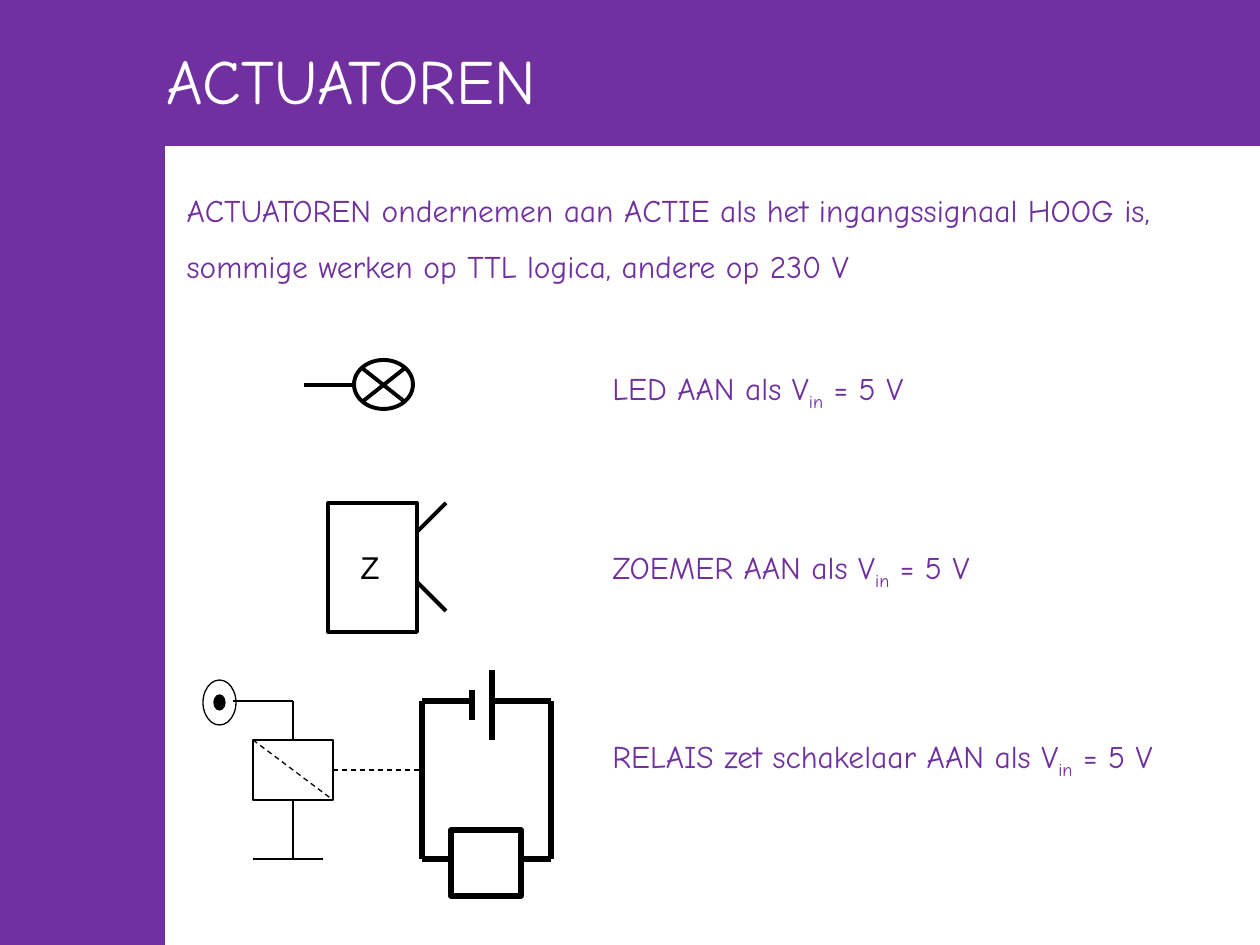
import pptx
import pptx.dml.color
import pptx.enum.dml
import pptx.enum.shapes
import pptx.enum.text
import pptx.util
import pptx.oxml.ns
from lxml import etree

SCALE = 914400 / 126
PURPLE, WHITE, BLACK = "7030A0", "FFFFFF", "000000"
FONT = "Comic Neue"
RECT = pptx.enum.shapes.MSO_SHAPE.RECTANGLE
OVAL = pptx.enum.shapes.MSO_SHAPE.OVAL
TOP, RIGHT, BOTTOM = 0, 3, 2


def px(*nums):
    return [round(n * SCALE) for n in nums]


def tint(code):
    return pptx.dml.color.RGBColor.from_string(code)


def stroke(line, color, width):
    line.color.rgb = tint(color)
    line.width = pptx.util.Pt(width)


def add_form(shapes, kind, box, width, fill=None, color=BLACK):
    form = shapes.add_shape(kind, *px(*box))
    form.shadow.inherit = False
    if fill:
        form.fill.solid()
        form.fill.fore_color.rgb = tint(fill)
    else:
        form.fill.background()
    stroke(form.line, color, width)
    return form


def add_wire(shapes, ends, width, dash=False):
    wire = shapes.add_connector(pptx.enum.shapes.MSO_CONNECTOR.STRAIGHT, *px(*ends))
    stroke(wire.line, BLACK, width)
    if dash:
        wire.line.dash_style = pptx.enum.dml.MSO_LINE.DASH
    etree.SubElement(wire._element.spPr, pptx.oxml.ns.qn("a:effectLst"))
    return wire


def style(para, size=18, color=PURPLE, name=FONT):
    para.alignment = pptx.enum.text.PP_ALIGN.LEFT
    para.space_before = pptx.util.Pt(0)
    para.font.size = pptx.util.Pt(size)
    para.font.name = name
    para.font.color.rgb = tint(color)


def place(holder, box):
    holder.left, holder.top, holder.width, holder.height = px(*box)
    frame = holder.text_frame
    frame.word_wrap = True
    frame.auto_size = pptx.enum.text.MSO_AUTO_SIZE.NONE
    frame.vertical_anchor = pptx.enum.text.MSO_ANCHOR.TOP
    return frame


def add_frame(slide):
    """Purple bars behind the text, and the title on them."""
    tree = slide.shapes._spTree
    for box in ((0, 0, 1260, 145), (0, 0, 164, 945)):
        bar = add_form(slide.shapes, RECT, box, 0.75, PURPLE, PURPLE)
        tree.insert(2, bar._element)
    frame = place(slide.shapes.title, (154, 35, 853, 88))
    frame.text = "ACTUATOREN"
    style(frame.paragraphs[0], 36, WHITE)


def add_intro(slide, box):
    frame = place(slide.placeholders[1], box)
    frame.text = ("ACTUATOREN ondernemen aan ACTIE als het ingangssignaal HOOG is,\n"
                  "sommige werken op TTL logica, andere op 230 V")
    for para in frame.paragraphs:
        style(para)
        props = para._p.get_or_add_pPr()
        props.set("marL", "0")
        props.set("indent", "0")
        etree.SubElement(props, pptx.oxml.ns.qn("a:buNone"))
        props.insert_element_before(props[-1], "a:defRPr")
    frame.paragraphs[1].space_before = pptx.util.Pt(10)


def add_label(slide, box, lead):
    """Label that ends in V with a lowered "in"."""
    para = place(slide.shapes.add_textbox(0, 0, 0, 0), box).paragraphs[0]
    style(para)
    for text in (lead + " als V", "in", " = 5 V"):
        run = para.add_run()
        run.text = text
        if text == "in":
            run._r.get_or_add_rPr().set("baseline", "-25000")


def add_lamp(slide, x, y):
    parts = slide.shapes.add_group_shape().shapes
    add_form(parts, OVAL, (x + 50, y, 59, 49), 2.25)
    add_wire(parts, (x + 58, y + 8, x + 101, y + 42), 2.25)
    add_wire(parts, (x + 101, y + 8, x + 58, y + 42), 2.25)
    add_wire(parts, (x, y + 25, x + 50, y + 25), 2.25)


def add_buzzer(slide, x, y):
    parts = slide.shapes.add_group_shape().shapes
    add_form(parts, RECT, (x, y, 89, 129), 2.25)
    for start, end in ((29, 0), (79, 108)):
        add_wire(parts, (x + 89, y + start, x + 118, y + end), 2.25)
    frame = place(parts.add_textbox(0, 0, 0, 0), (x + 20, y + 39, 49, 50))
    frame.text = "Z"
    style(frame.paragraphs[0], color=BLACK, name="Arial")


def add_coil(parts, x, y):
    """Push button, relay coil and ground."""
    coil = add_form(parts, RECT, (x + 50, y + 70, 80, 60), 0.75)
    add_form(parts, OVAL, (x, y + 10, 33, 45), 0.75)
    add_form(parts, OVAL, (x + 11, y + 25, 11, 15), 0.75, BLACK)
    add_wire(parts, (x + 30, y + 31, x + 90, y + 31), 0.75)
    add_wire(parts, (x + 90, y + 31, x + 90, y + 70), 0.75).end_connect(coil, TOP)
    add_wire(parts, (x + 90, y + 130, x + 90, y + 189), 0.75).begin_connect(coil, BOTTOM)
    add_wire(parts, (x + 50, y + 189, x + 120, y + 189), 0.75)
    add_wire(parts, (x + 130, y + 100, x + 219, y + 100), 0.75, True).begin_connect(coil, RIGHT)
    add_wire(parts, (x + 50, y + 70, x + 130, y + 130), 0.75, True)


def add_loop(parts, x, y):
    """Switched circuit with a battery and a load."""
    wires = ((0, 31, 50, 31), (70, 31, 129, 31),
             (0, 31, 0, 189), (129, 31, 129, 189),
             (0, 189, 29, 189), (100, 189, 129, 189),
             (50, 20, 50, 50), (70, 0, 70, 70))
    for x1, y1, x2, y2 in wires:
        add_wire(parts, (x + x1, y + y1, x + x2, y + y2), 3)
    add_form(parts, RECT, (x + 29, y + 160, 70, 66), 3)


def add_relay(slide, x, y):
    parts = slide.shapes.add_group_shape().shapes
    add_coil(parts, x, y)
    add_loop(parts, x + 219, y)


def main():
    deck = pptx.Presentation()
    deck.slide_width, deck.slide_height = px(1260, 945)
    slide = deck.slides.add_slide(deck.slide_layouts[1])
    add_frame(slide)
    add_intro(slide, (174, 185, 1086, 107))
    add_lamp(slide, 304, 360)
    add_buzzer(slide, 328, 503)
    add_relay(slide, 203, 670)
    for top, width, lead in ((363, 507, "LED AAN"), (542, 507, "ZOEMER AAN"),
                             (731, 630, "RELAIS zet schakelaar AAN")):
        add_label(slide, (600, top, width, 50), lead)
    deck.save("out.pptx")


if __name__ == "__main__":
    main()
